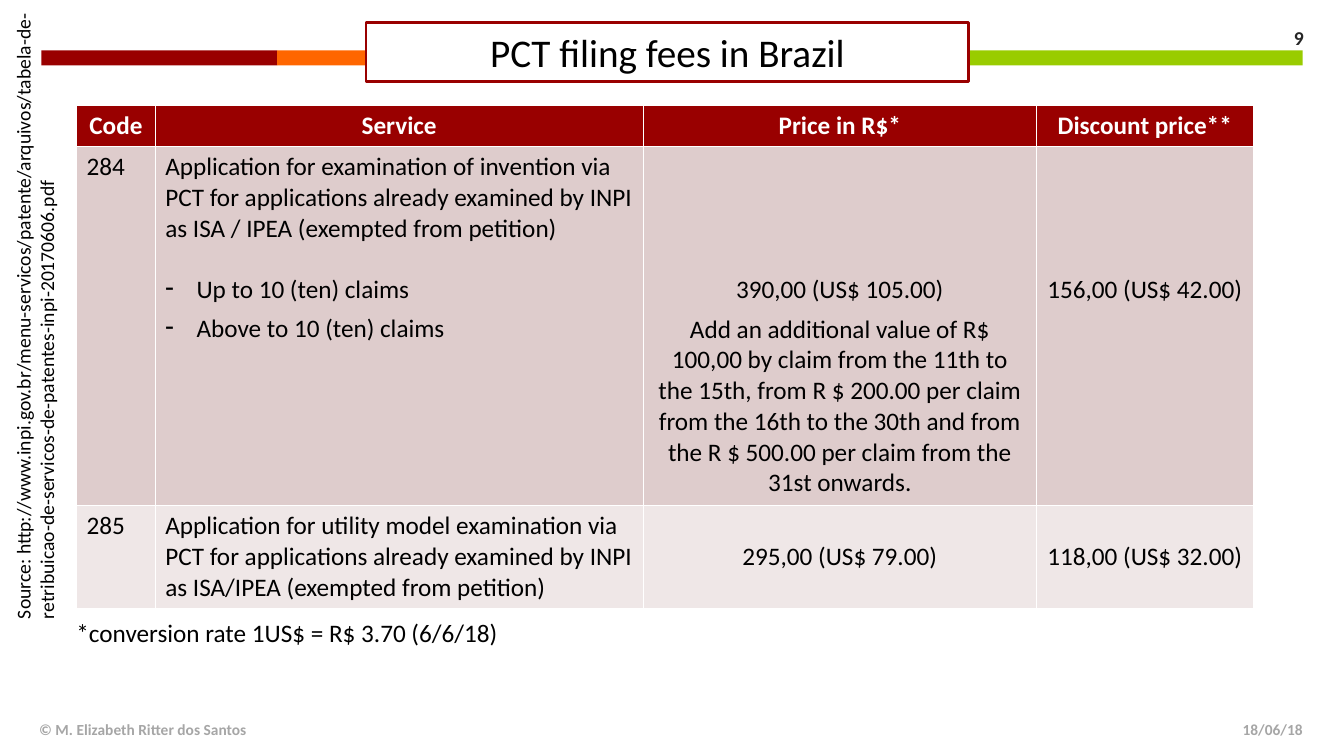
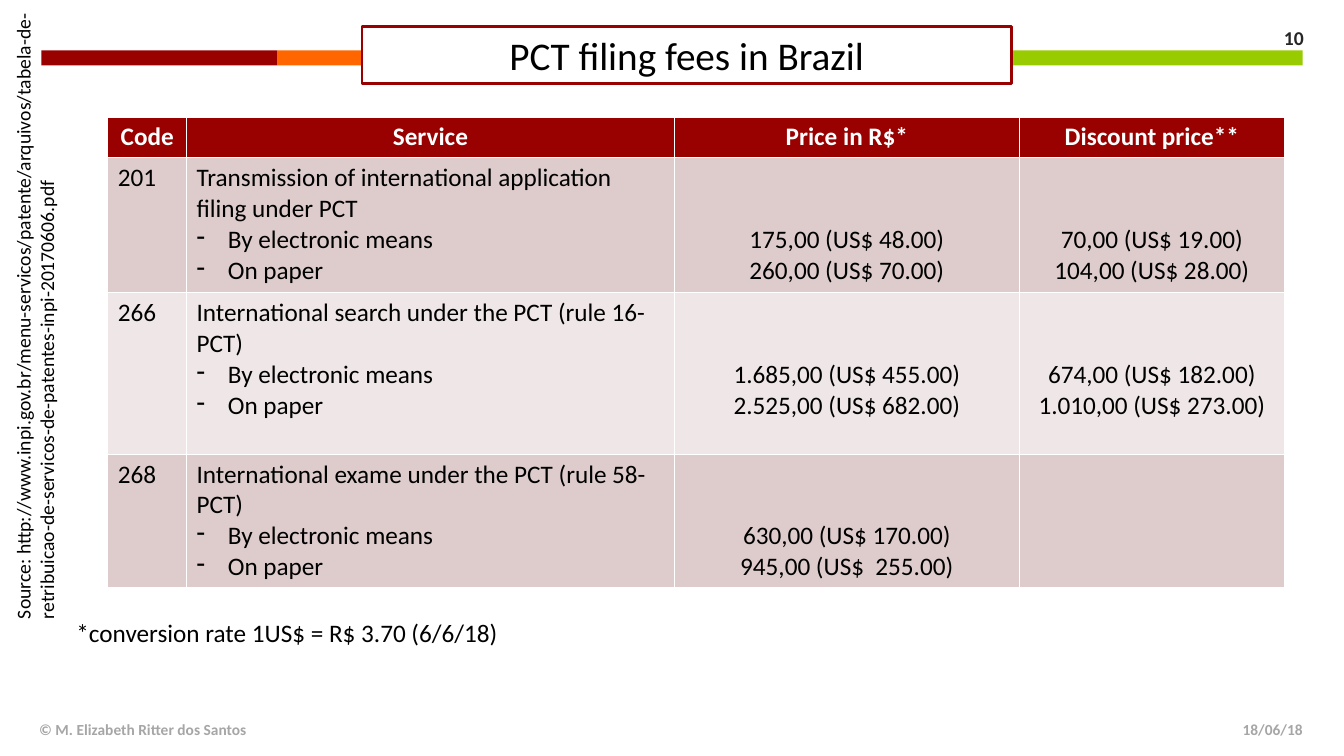
from dataclasses import dataclass

from lxml.etree import SubElement
from pptx import Presentation
from pptx.dml.color import RGBColor
from pptx.enum.shapes import MSO_SHAPE
from pptx.enum.text import MSO_ANCHOR, MSO_AUTO_SIZE, PP_ALIGN
from pptx.oxml.ns import qn
from pptx.util import Emu, Pt

EMU_PER_PX = 9144
FONT = "Calibri"
LINE_HEIGHT = 22
COLORS = {
    "red": "990000",
    "orange": "FF6600",
    "green": "99CC00",
    "white": "FFFFFF",
    "black": "000000",
    "dark": "262626",
    "gray": "A6A6A6",
    "band_dark": "DECCCC",
    "band_light": "EFE7E7",
}
TITLE = "PCT filing fees in Brazil"
HEADERS = ["Code", "Service", "Price in R$*", "Discount price**"]
CONVERSION = "*conversion rate 1US$ = R$ 3.70 (6/6/18)"
SOURCE = (
    "Source: http://www.inpi.gov.br/menu-servicos/patente/arquivos/"
    "tabela-de-retribuicao-de-servicos-de-patentes-inpi-20170606.pdf"
)
AUTHOR = "© M. Elizabeth Ritter dos Santos"
DATE = "18/06/18"


@dataclass
class Line:
    text: str
    bullet: bool = False
    before: int = 0
    after: int = 0


@dataclass
class Fee:
    code: str
    service: list
    prices: list
    discounts: list
    skipped_lines: int
    height: int


@dataclass
class FeeSlide:
    number: int
    title_box: tuple
    table_corner: tuple
    columns: list
    fees: list


def filing_options():
    return [Line("By electronic means", bullet=True), Line("On paper", bullet=True)]


FEE_SLIDES = [
    FeeSlide(9, (363, 22, 598, 59), (76, 105), [78, 484, 390, 215], [
        Fee("284",
            [Line("Application for examination of invention via PCT for applications "
                  "already examined by INPI as ISA / IPEA (exempted from petition)"),
             Line("Up to 10 (ten) claims", bullet=True, before=LINE_HEIGHT, after=6),
             Line("Above to 10 (ten) claims", bullet=True)],
            [Line("390,00 (US$ 105.00)", after=6),
             Line("Add an additional value of R$ 100,00 by claim from the 11th to the 15th, "
                  "from R $ 200.00 per claim from the 16th to the 30th and from the "
                  "R $ 500.00 per claim from the 31st onwards.")],
            [Line("156,00 (US$ 42.00)")], 4, 356),
        Fee("285",
            [Line("Application for utility model examination via PCT for applications "
                  "already examined by INPI as ISA/IPEA (exempted from petition)")],
            [Line("295,00 (US$ 79.00)")],
            [Line("118,00 (US$ 32.00)")], 1, 102),
    ]),
    FeeSlide(10, (359, 26, 644, 57), (107, 116), [78, 484, 342, 263], [
        Fee("201",
            [Line("Transmission of international application filing under PCT"),
             *filing_options()],
            [Line("175,00 (US$ 48.00)"), Line("260,00 (US$ 70.00)")],
            [Line("70,00 (US$ 19.00)"), Line("104,00 (US$ 28.00)")], 2, 134),
        Fee("266",
            [Line("International search under the PCT (rule 16-PCT)"), *filing_options()],
            [Line("1.685,00 (US$ 455.00)"), Line("2.525,00 (US$ 682.00)")],
            [Line("674,00 (US$ 182.00)"), Line("1.010,00 (US$ 273.00)")], 2, 160),
        Fee("268",
            [Line("International exame under the PCT (rule 58-PCT)"), *filing_options()],
            [Line("630,00 (US$ 170.00)"), Line("945,00 (US$  255.00)")],
            [], 2, 130),
    ]),
]


def px(length):
    return Emu(length * EMU_PER_PX)


def color(name):
    return RGBColor.from_string(COLORS[name])


def place(shape, box):
    shape.left, shape.top, shape.width, shape.height = map(px, box)


def fill(target, name):
    target.fill.solid()
    target.fill.fore_color.rgb = color(name)


def style(paragraph, size, color_name="black", bold=False, align=PP_ALIGN.LEFT):
    paragraph.alignment = align
    font = paragraph.font
    font.name, font.size, font.bold = FONT, Pt(size), bold
    font.color.rgb = color(color_name)


def add_dash(paragraph):
    properties = paragraph._p.get_or_add_pPr()
    properties.set("marL", str(px(31)))
    properties.set("indent", str(px(-31)))
    SubElement(properties, qn("a:buChar")).set("char", "-")


def add_label(slide, text, box, size, color_name="black", bold=False,
              align=PP_ALIGN.LEFT, anchor=MSO_ANCHOR.TOP):
    label = slide.shapes.add_textbox(*map(px, box))
    frame = label.text_frame
    frame.word_wrap = True
    frame.vertical_anchor = anchor
    frame.text = text
    style(frame.paragraphs[0], size, color_name, bold, align)
    return label


def add_title(slide, box):
    title = slide.shapes.title
    place(title, box)
    fill(title, "white")
    title.line.color.rgb = color("red")
    title.line.width = Pt(2)
    frame = title.text_frame
    frame.text = TITLE
    frame.auto_size = MSO_AUTO_SIZE.NONE
    frame.vertical_anchor = MSO_ANCHOR.MIDDLE
    style(frame.paragraphs[0], 28, align=PP_ALIGN.CENTER)


def fill_cell(cell, lines, background, skipped_lines=0, **text_style):
    fill(cell, background)
    cell.margin_top = px(5) + Pt(LINE_HEIGHT * skipped_lines)
    frame = cell.text_frame
    for index, line in enumerate(lines):
        paragraph = frame.add_paragraph() if index else frame.paragraphs[0]
        paragraph.text = line.text
        if line.bullet:
            add_dash(paragraph)
        paragraph.space_before = Pt(line.before)
        paragraph.space_after = Pt(line.after)
        style(paragraph, 18, **text_style)


def add_fee_table(slide, corner, columns, fees):
    heights = [40] + [fee.height for fee in fees]
    box = (*corner, sum(columns), sum(heights))
    table = slide.shapes.add_table(len(heights), len(columns), *map(px, box)).table
    for column, width in zip(table.columns, columns):
        column.width = px(width)
    for row, height in zip(table.rows, heights):
        row.height = px(height)
    for cell, header in zip(table.rows[0].cells, HEADERS):
        fill_cell(cell, [Line(header)], "red",
                  color_name="white", bold=True, align=PP_ALIGN.CENTER)
    for index, fee in enumerate(fees):
        background = "band_light" if index % 2 else "band_dark"
        code, service, price, discount = table.rows[index + 1].cells
        fill_cell(code, [Line(fee.code)], background)
        fill_cell(service, fee.service, background)
        for cell, amounts in ((price, fee.prices), (discount, fee.discounts)):
            fill_cell(cell, amounts, background,
                      fee.skipped_lines if amounts else 0, align=PP_ALIGN.CENTER)


def add_bands(slide):
    left = 41
    for name, width in (("red", 234), ("orange", 400), ("green", 617)):
        band = slide.shapes.add_shape(MSO_SHAPE.RECTANGLE, *map(px, (left, 50, width, 15)))
        band.shadow.inherit = False
        fill(band, name)
        band.line.fill.background()
        slide.slide_layout.shapes.element.append(band.element)
        left += width


def add_notes_and_footer(slide, number):
    add_label(slide, CONVERSION, (66, 608, 684, 40), 18)
    source = add_label(slide, SOURCE, (6, -2, 67, 626), 14)
    source.element.txBody.bodyPr.set("vert", "vert270")
    middle = MSO_ANCHOR.MIDDLE
    add_label(slide, DATE, (991, 704, 311, 40), 11, "gray", True, PP_ALIGN.RIGHT, middle)
    add_label(slide, AUTHOR, (29, 704, 893, 40), 11, "gray", True, anchor=middle)
    add_label(slide, str(number), (1211, 18, 92, 39), 14, "dark", True,
              PP_ALIGN.RIGHT, middle)


def main():
    presentation = Presentation()
    presentation.slide_width, presentation.slide_height = px(1333), px(750)
    layout = presentation.slide_layouts.get_by_name("Title Only")
    for index, content in enumerate(FEE_SLIDES):
        slide = presentation.slides.add_slide(layout)
        if index == 0:
            add_bands(slide)
        add_title(slide, content.title_box)
        add_fee_table(slide, content.table_corner, content.columns, content.fees)
        add_notes_and_footer(slide, content.number)
    presentation.save("out.pptx")


if __name__ == "__main__":
    main()
